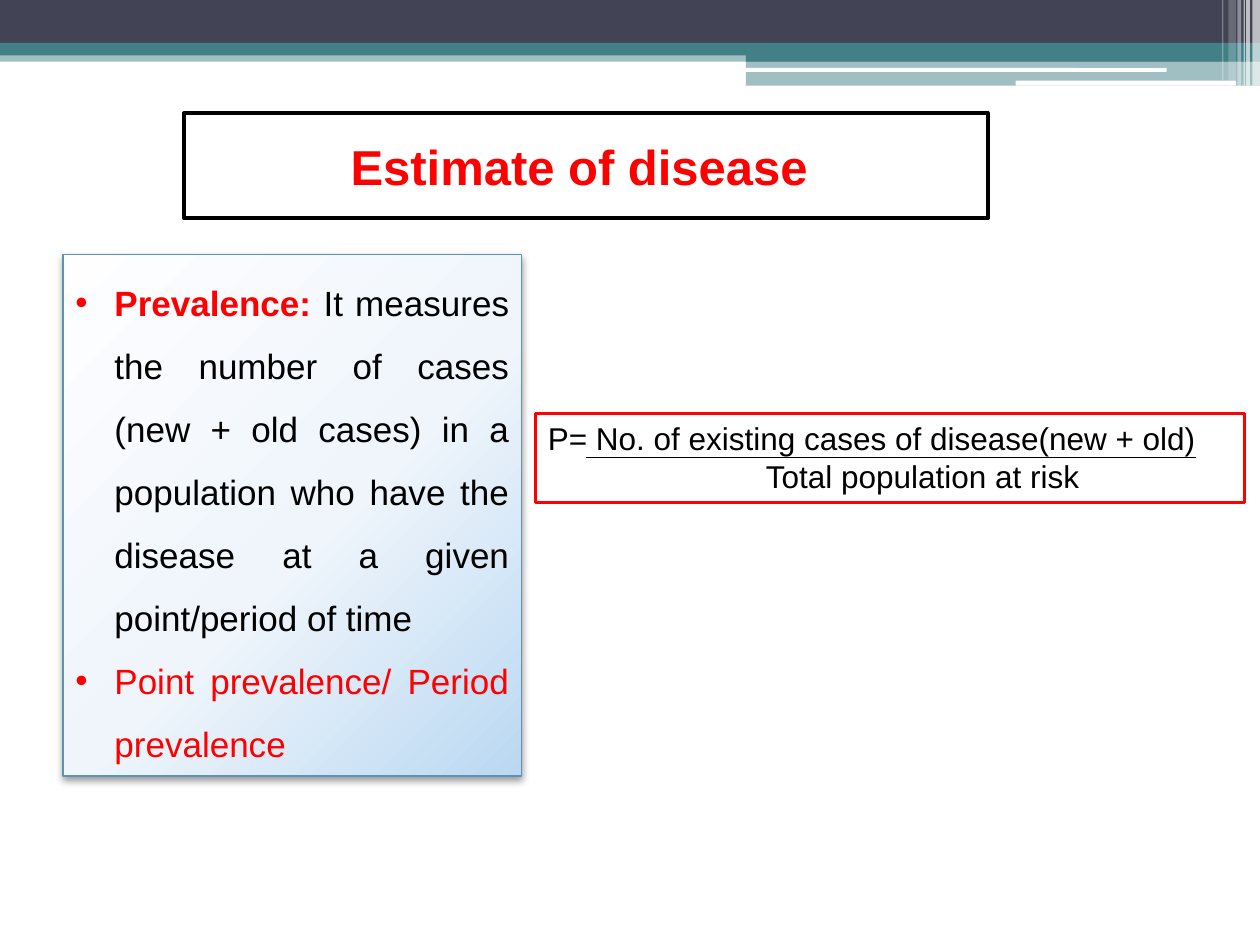
from typing import NamedTuple

from pptx import Presentation
from pptx import util as u
from pptx.dml.color import RGBColor
from pptx.enum import shapes, text
from pptx.oxml import parse_xml
from pptx.oxml.ns import nsdecls, qn

COLOURS = {
    "navy": "424456", "teal": "438086", "white": "FFFFFF", "black": "000000",
    "red": "FF0000", "steel": "5C92B5",
    "pale": "FEFEFF", "mist": "EFF5FB", "sky": "BAD8F2",
}
FONT = "Arial"


class Band(NamedTuple):
    left: float
    top: float
    width: float
    height: float
    colour: str
    opacity: int = 100
    rounded: bool = False


BANDS = [
    Band(0, 0.4, 10, 0.09, "teal", 50),
    Band(0, 0, 10, 0.34, "navy"),
    Band(0, 0.34, 10, 0.1, "teal"),
    Band(5.92, 0.39, 4.08, 0.1, "teal"),
    Band(5.92, 0.48, 4.08, 0.2, "teal", 50),
    Band(5.91, 0.54, 3.35, 0.03, "white", rounded=True),
    Band(8.06, 0.64, 1.75, 0.04, "white", rounded=True),
    Band(9.94, 0, 0.06, 0.68, "white", 65),
    Band(9.89, 0, 0.03, 0.68, "white", 65),
    Band(9.87, 0, 0.01, 0.68, "white", 60),
    Band(9.82, 0, 0.03, 0.68, "white", 40),
    Band(9.75, 0, 0.06, 0.64, "white", 20),
    Band(9.7, 0, 0.01, 0.64, "white", 30),
]


def rgb(name: str) -> RGBColor:
    return RGBColor.from_string(COLOURS[name])


def draw_band(slide, band: Band) -> None:
    kind = shapes.MSO_SHAPE.ROUNDED_RECTANGLE if band.rounded else shapes.MSO_SHAPE.RECTANGLE
    shape = slide.shapes.add_shape(kind, *map(u.Inches, band[:4]))
    shape.shadow.inherit = False
    shape.line.fill.background()
    shape.fill.solid()
    shape.fill.fore_color.rgb = rgb(band.colour)
    if band.opacity < 100:
        colour = shape.fill._xPr.find(qn("a:solidFill"))[0]
        colour.append(parse_xml(f'<a:alpha {nsdecls("a")} val="{band.opacity * 1000}"/>'))


def prepare_box(shape, colour: str, width: float) -> None:
    shape.line.color.rgb = rgb(colour)
    shape.line.width = u.Pt(width)
    shape.text_frame.word_wrap = True
    shape.text_frame.auto_size = text.MSO_AUTO_SIZE.SHAPE_TO_FIT_TEXT


def add_text(paragraph, content: str, *, size: float, colour: str = "black", bold: bool = False) -> None:
    run = paragraph.add_run()
    run.text = content
    run.font.name = FONT
    run.font.size = u.Pt(size)
    run.font.bold = bold
    run.font.color.rgb = rgb(colour)


def set_indent(paragraph, left: float, first: float = 0) -> None:
    properties = paragraph._p.get_or_add_pPr()
    properties.set("marL", str(u.Inches(left)))
    properties.set("indent", str(u.Inches(first)))


def format_bullet(paragraph) -> None:
    set_indent(paragraph, 0.31, -0.31)
    paragraph.alignment = text.PP_ALIGN.JUSTIFY
    paragraph.line_spacing = 1.5
    properties = paragraph._p.get_or_add_pPr()
    properties.append(parse_xml(f'<a:buFont {nsdecls("a")} typeface="{FONT}"/>'))
    properties.append(parse_xml(f'<a:buChar {nsdecls("a")} char="•"/>'))


def shade_panel(shape) -> None:
    stops = "".join(
        f'<a:gs pos="{position * 1000}"><a:srgbClr val="{COLOURS[name]}"/></a:gs>'
        for position, name in [(0, "pale"), (55, "mist"), (100, "sky")]
    )
    shape.fill.gradient()
    properties = shape.fill._xPr
    properties.replace(properties.find(qn("a:gradFill")), parse_xml(
        f'<a:gradFill {nsdecls("a")} rotWithShape="1"><a:gsLst>{stops}</a:gsLst>'
        '<a:path path="circle"><a:fillToRect l="-40000" t="-90000" r="140000" b="190000"/>'
        '</a:path></a:gradFill>'))
    properties.append(parse_xml(
        f'<a:effectLst {nsdecls("a")}><a:outerShdw blurRad="{u.Pt(4.1)}" dist="{u.Pt(2)}" '
        f'dir="5400000" rotWithShape="0"><a:srgbClr val="{COLOURS["black"]}">'
        '<a:alpha val="40000"/></a:srgbClr></a:outerShdw></a:effectLst>'))


def add_title(slide) -> None:
    title = slide.shapes.title
    title.left, title.top, title.width, title.height = map(u.Inches, (1.46, 1.03, 6.38, 0.57))
    prepare_box(title, "black", 2.25)
    paragraph = title.text_frame.paragraphs[0]
    paragraph.alignment = text.PP_ALIGN.CENTER
    add_text(paragraph, "Estimate of disease ", size=28, colour="red", bold=True)


def add_definition(slide) -> None:
    panel = slide.shapes.add_textbox(*map(u.Inches, (0.5, 2.02, 3.64, 4.14)))
    prepare_box(panel, "steel", 0.75)
    shade_panel(panel)
    definition = panel.text_frame.paragraphs[0]
    kinds = panel.text_frame.add_paragraph()
    for paragraph in (definition, kinds):
        format_bullet(paragraph)
    add_text(definition, "Prevalence: ", size=20, colour="red", bold=True)
    add_text(definition, "It measures the number of cases (new + old cases) in a population "
             "who have the disease at a given point/period of time ", size=20)
    add_text(kinds, "Point prevalence/ Period prevalence", size=20, colour="red")


def add_formula(slide) -> None:
    box = slide.shapes.add_textbox(*map(u.Inches, (4.25, 3.28, 5.63, 0.71)))
    prepare_box(box, "red", 1.5)
    numerator = box.text_frame.paragraphs[0]
    denominator = box.text_frame.add_paragraph()
    add_text(numerator, "P= No. of existing cases of disease(new + old)", size=18)
    set_indent(denominator, 1.73)
    add_text(denominator, "Total population at risk", size=18)
    fraction_bar = slide.shapes.add_connector(
        shapes.MSO_CONNECTOR.STRAIGHT, *map(u.Inches, (4.65, 3.63, 9.49, 3.63)))
    fraction_bar.line.color.rgb = rgb("black")
    fraction_bar.line.width = u.Pt(0.75)
    fraction_bar._element.spPr.append(parse_xml(f'<a:effectLst {nsdecls("a")}/>'))


def main() -> None:
    presentation = Presentation()
    presentation.slide_width = u.Inches(10)
    presentation.slide_height = u.Inches(7.5)
    slide = presentation.slides.add_slide(presentation.slide_layouts[5])
    slide.background.fill.solid()
    slide.background.fill.fore_color.rgb = rgb("white")
    for band in BANDS:
        draw_band(slide, band)
    add_title(slide)
    add_definition(slide)
    add_formula(slide)
    presentation.save("out.pptx")


if __name__ == "__main__":
    main()
